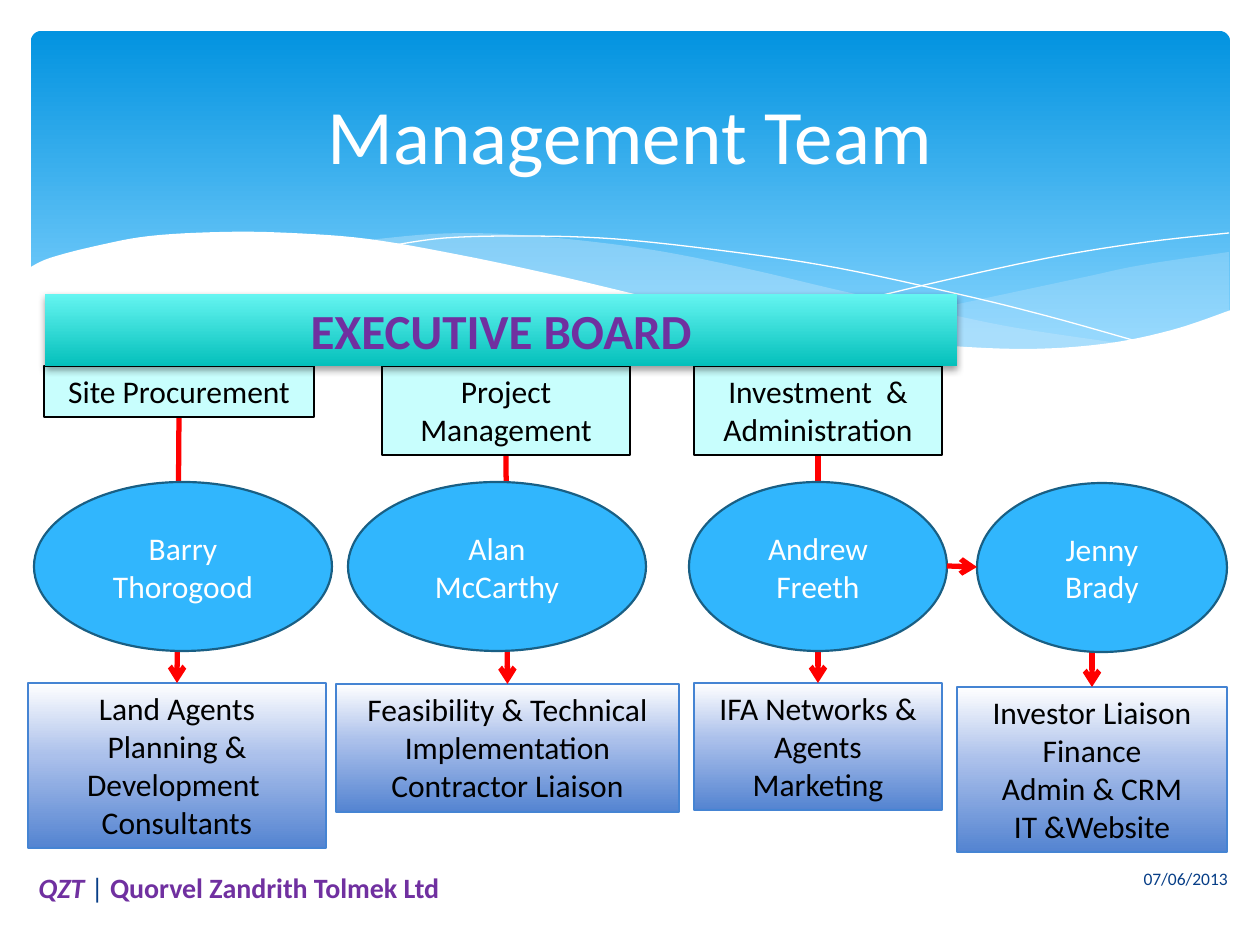
from lxml.etree import SubElement
from pptx import Presentation
from pptx.dml.color import RGBColor
from pptx.enum.shapes import MSO_CONNECTOR, MSO_SHAPE
from pptx.enum.text import MSO_ANCHOR, PP_ALIGN
from pptx.oxml.ns import qn
from pptx.util import Pt

PX = 914400 / 126
FONT = "Calibri"
WHITE = RGBColor(0xFF, 0xFF, 0xFF)
BLACK = RGBColor(0, 0, 0)
RED = RGBColor(0xFF, 0, 0)
PURPLE = RGBColor(0x70, 0x30, 0xA0)
NAVY = RGBColor(0x07, 0x3E, 0x87)
MIST = RGBColor(0xC6, 0xE7, 0xFC)
AQUA = RGBColor(0xC8, 0xFE, 0xFD)
SKY = RGBColor(0x31, 0xB6, 0xFD)
SKY_EDGE = RGBColor(0x19, 0x5F, 0x84)
DUTY_EDGE = RGBColor(0x45, 0x84, 0xD3)
BANNER_GRADIENT = [(0, "0293E0"), (90, "83D3FE")]
DUTY_GRADIENT = [(0, "FFFFFF"), (44, "ABC0EB"), (100, "5484D1")]
BOARD_GRADIENT = [(0, "65F5F1"), (100, "04C0BB")]

# Each team: role, person, duties, each with its box (left, top, width, height)
TEAMS = [
    {"role": ("Site Procurement", (44, 366, 270, 51)),
     "person": ("Barry Thorogood", (34, 482, 298, 169)),
     "duties": (["Land Agents", "Planning & Development  Consultants"],
                (28, 683, 298, 165))},
    {"role": ("Project Management", (382, 366, 248, 89)),
     "person": ("Alan McCarthy", (348, 482, 298, 169)),
     "duties": (["Feasibility & Technical Implementation",
                 "Contractor Liaison"], (336, 684, 343, 128))},
    {"role": ("Investment  & Administration", (694, 366, 248, 89)),
     "person": ("Andrew Freeth", (689, 482, 258, 169)),
     "duties": (["IFA Networks & Agents", "Marketing"], (694, 683, 248, 127))},
    {"role": None,
     "person": ("Jenny Brady", (977, 483, 250, 169)),
     "duties": (["Investor Liaison", "Finance", "Admin & CRM", "IT &Website"],
                (957, 687, 270, 165))},
]

# Waves: knots of smooth curves; a filled wave joins its curves end to end
RIGHT_WAVE = [
    [(1229, 252), (1142, 265), (1085, 277), (982, 299), (889, 319), (833, 334)],
    [(833, 334), (906, 343), (969, 348), (1026, 350), (1099, 348), (1160, 337),
     (1204, 323), (1229, 311)]]
MIDDLE_WAVE = [
    [(1125, 344), (1017, 328), (934, 311), (842, 291), (753, 270), (665, 252),
     (586, 241), (503, 234), (433, 234), (360, 241)],
    [(360, 241), (456, 256), (566, 280), (668, 302), (779, 325), (876, 340),
     (959, 349), (1043, 350), (1125, 344)]]
WHITE_WAVE = [
    [(1231, 310), (1172, 330), (1103, 344), (1019, 349), (915, 343), (816, 330),
     (699, 309), (563, 277), (460, 255), (368, 239), (290, 233), (223, 232),
     (150, 236), (96, 246), (50, 258), (29, 268)],
    [(29, 415), (1231, 415)]]
FALLING_LINE = [[(389, 246), (445, 238), (524, 236), (616, 239), (733, 252),
                 (838, 268), (958, 294), (1047, 316), (1143, 343)]]
RISING_LINE = [[(772, 324), (847, 304), (942, 281), (1053, 257), (1147, 242),
                (1229, 233)]]


def emu(*lengths):
    return [round(v * PX) for v in lengths]


def smooth(knots, steps=6):
    """Points of a Catmull-Rom curve through the knots."""
    if len(knots) < 3:
        return knots
    ext = [knots[0], *knots, knots[-1]]
    points = [knots[0]]
    for a, b, c, d in zip(ext, ext[1:], ext[2:], ext[3:]):
        for i in range(1, steps + 1):
            t = i / steps
            points.append(tuple(
                q + (r - p) * t / 2 + (2 * p - 5 * q + 4 * r - u) * t**2 / 2
                + (3 * q - p - 3 * r + u) * t**3 / 2
                for p, q, r, u in zip(a, b, c, d)))
    return points


def paint(sp, fill=None, line=None, width=1):
    """Fill with a colour, a list of gradient stops or nothing; then the line."""
    sp.shadow.inherit = False
    if isinstance(fill, list):
        sp.fill.gradient()
        sp.fill.gradient_angle = 270
        stops = sp._element.spPr.find(".//" + qn("a:gsLst"))
        for old in list(stops):
            stops.remove(old)
        for pos, colour in fill:
            stop = SubElement(stops, qn("a:gs"), pos=str(pos * 1000))
            SubElement(stop, qn("a:srgbClr"), val=colour)
    elif fill is None:
        sp.fill.background()
    else:
        sp.fill.solid()
        sp.fill.fore_color.rgb = fill
    if line is None:
        sp.line.fill.background()
    else:
        sp.line.color.rgb = line
        sp.line.width = Pt(width)


def write(sp, paragraphs, align=PP_ALIGN.CENTER, anchor=MSO_ANCHOR.MIDDLE):
    """Each paragraph is a list of (text, font format) runs."""
    tf = sp.text_frame
    tf.word_wrap = True
    tf.vertical_anchor = anchor
    for i, runs in enumerate(paragraphs):
        p = tf.add_paragraph() if i else tf.paragraphs[0]
        p.alignment = align
        for text, fmt in runs:
            r = p.add_run()
            r.text = text
            r.font.name = FONT
            r.font.color.rgb = fmt["color"]
            for key in fmt.keys() - {"color"}:
                setattr(r.font, key, fmt[key])


def add_box(s, kind, box, lines=(), color=BLACK, size=18, bold=False,
            anchor=MSO_ANCHOR.TOP, **look):
    sp = s.shapes.add_shape(kind, *emu(*box))
    paint(sp, **look)
    fmt = {"color": color, "size": Pt(size), "bold": bold}
    write(sp, [[(line, fmt)] for line in lines], anchor=anchor)
    return sp


def add_wave(s, curves, fill=None, alpha=100, line=None):
    points = [pt for knots in curves for pt in smooth(knots)]
    fb = s.shapes.build_freeform(*emu(*points[0]))
    fb.add_line_segments([emu(*pt) for pt in points[1:]], close=fill is not None)
    sp = fb.convert_to_shape()
    paint(sp, fill, line, 0)
    if alpha < 100:
        colour = sp._element.spPr.find(".//" + qn("a:srgbClr"))
        SubElement(colour, qn("a:alpha"), val=str(alpha * 1000))


def add_arrow(s, start, end):
    c = s.shapes.add_connector(MSO_CONNECTOR.STRAIGHT, *emu(*start, *end))
    c.line.color.rgb = RED
    c.line.width = Pt(3)
    SubElement(c.line._get_or_add_ln(), qn("a:tailEnd"), type="arrow")
    SubElement(c._element.spPr, qn("a:effectLst"))
    return c


prs = Presentation()
prs.slide_width, prs.slide_height = emu(1260, 945)
s = prs.slides.add_slide(prs.slide_layouts[5])

banner = add_box(s, MSO_SHAPE.ROUNDED_RECTANGLE, (31, 31, 1199, 340),
                 fill=BANNER_GRADIENT)
banner.adjustments[0] = 0.03
add_wave(s, RIGHT_WAVE, MIST, 29)
add_wave(s, MIDDLE_WAVE, MIST, 40)
add_wave(s, FALLING_LINE, line=WHITE)
add_wave(s, RISING_LINE, line=WHITE)
add_wave(s, WHITE_WAVE, WHITE)

title = s.shapes.title
title.left, title.top, title.width, title.height = emu(63, 47, 1134, 173)
write(title, [[("Management Team", {"color": WHITE, "size": Pt(44)})]])
s.shapes._spTree.append(title._element)  # in front of the banner

for team in TEAMS:
    lines, box = team["duties"]
    duties = add_box(s, MSO_SHAPE.RECTANGLE, box, lines, fill=DUTY_GRADIENT,
                     line=DUTY_EDGE, width=0.75)
    x = box[0] + box[2] / 2
    arrow = add_arrow(s, (x, 551), (x, box[1]))
    if team["role"]:
        text, box = team["role"]
        role = add_box(s, MSO_SHAPE.RECTANGLE, box, [text], fill=AQUA, line=BLACK)
        arrow.begin_connect(role, 2)
    arrow.end_connect(duties, 0)
    text, box = team["person"]
    add_box(s, MSO_SHAPE.OVAL, box, [text], WHITE, anchor=MSO_ANCHOR.MIDDLE,
            fill=SKY, line=SKY_EDGE, width=1.25)

add_arrow(s, (947, 566), (977, 567))

board = add_box(s, MSO_SHAPE.RECTANGLE, (45, 294, 912, 72), ["EXECUTIVE BOARD"],
                PURPLE, 28, True, fill=BOARD_GRADIENT)
shadow = SubElement(board._element.spPr.find(qn("a:effectLst")), qn("a:outerShdw"),
                    blurRad=str(Pt(4)), dist=str(Pt(2)), dir="5400000")
SubElement(SubElement(shadow, qn("a:srgbClr"), val="000000"), qn("a:alpha"), val="38000")

brand = {"color": PURPLE, "size": Pt(16), "bold": True}
FOOTERS = [
    ((718, 854, 522, 50), PP_ALIGN.RIGHT,
     [("07/06/2013", {"color": NAVY, "size": Pt(10)})]),
    ((26, 862, 522, 50), PP_ALIGN.LEFT,
     [("QZT ", {**brand, "italic": True}),
      ("| ", {"color": NAVY, "size": Pt(16)}),
      ("Quorvel Zandrith Tolmek Ltd", brand)]),
]
for box, align, runs in FOOTERS:
    write(s.shapes.add_textbox(*emu(*box)), [runs], align)

prs.save("out.pptx")
